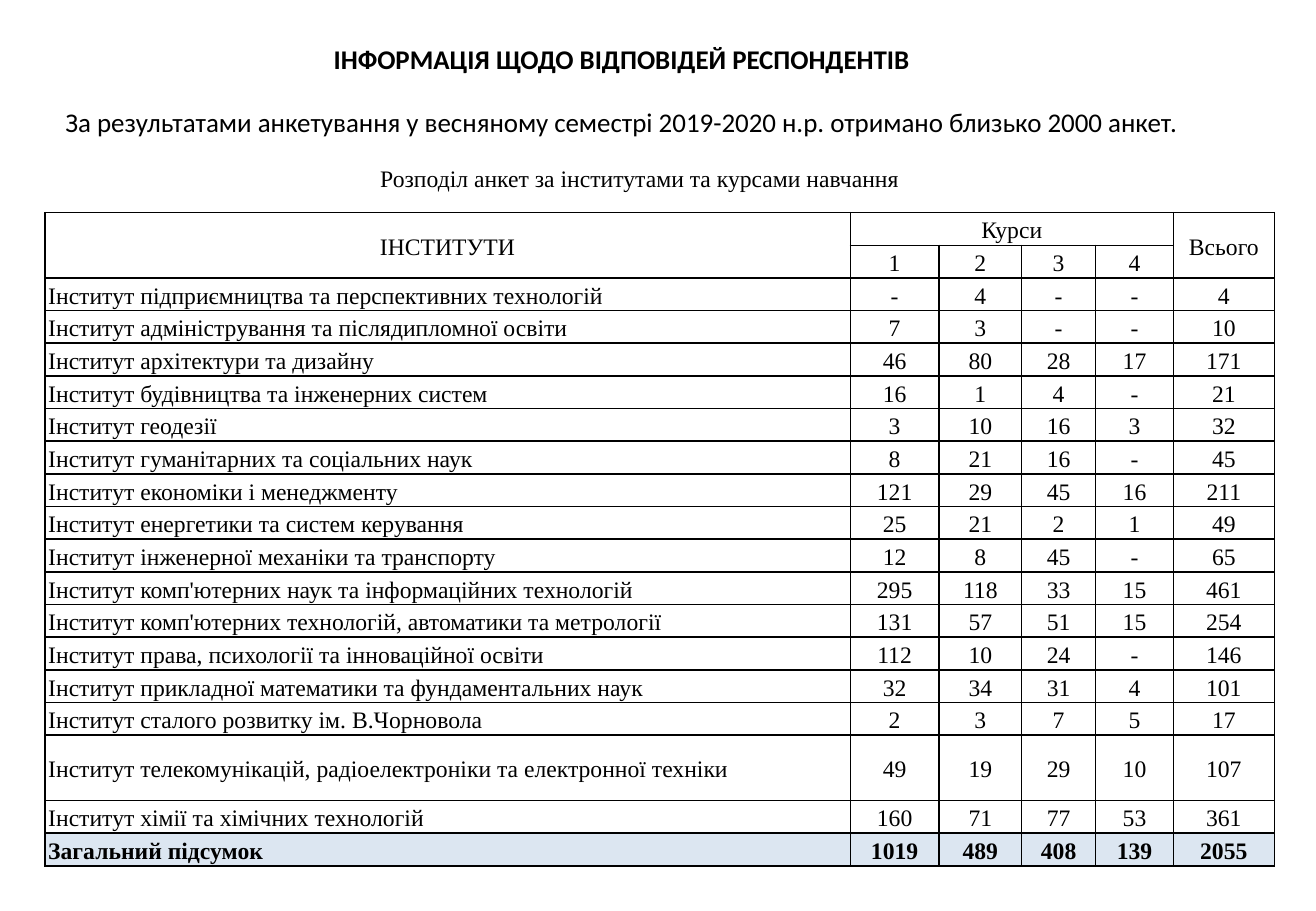
from lxml import etree
from pptx import Presentation
from pptx.dml.color import RGBColor
from pptx.enum.text import MSO_ANCHOR as ANCHOR, MSO_AUTO_SIZE as AUTO, PP_ALIGN as ALIGN
from pptx.oxml.ns import qn
from pptx.util import Pt

COLORS = {"text": "000000", "border": "000000", "total": "DCE6F1"}
SANS, SERIF = "Calibri", "Times New Roman"
COL_WIDTHS = [477.4, 52.6, 49, 43.9, 46.1, 59.8]
ROW_HEIGHT = 19.37
COURSES = [1, 2, 3, 4]
TALL_INSTITUTE = "Інститут телекомунікацій, радіоелектроніки та електронної техніки"
ANSWERS = [
    ("Інститут підприємництва та перспективних технологій", [0, 4, 0, 0]),
    ("Інститут адміністрування та післядипломної освіти", [7, 3, 0, 0]),
    ("Інститут архітектури та дизайну", [46, 80, 28, 17]),
    ("Інститут будівництва та інженерних систем", [16, 1, 4, 0]),
    ("Інститут геодезії", [3, 10, 16, 3]),
    ("Інститут гуманітарних та соціальних наук", [8, 21, 16, 0]),
    ("Інститут економіки і менеджменту", [121, 29, 45, 16]),
    ("Інститут енергетики та систем керування", [25, 21, 2, 1]),
    ("Інститут інженерної механіки та транспорту", [12, 8, 45, 0]),
    ("Інститут комп'ютерних наук та інформаційних технологій", [295, 118, 33, 15]),
    ("Інститут комп'ютерних технологій, автоматики та метрології", [131, 57, 51, 15]),
    ("Інститут права, психології та інноваційної освіти", [112, 10, 24, 0]),
    ("Інститут прикладної математики та фундаментальних наук", [32, 34, 31, 4]),
    ("Інститут сталого розвитку ім. В.Чорновола", [2, 3, 7, 5]),
    (TALL_INSTITUTE, [49, 19, 29, 10]),
    ("Інститут хімії та хімічних технологій", [160, 71, 77, 53]),
]


def write(tf, text, font=SERIF, size=14, bold=False, align=ALIGN.LEFT, spacing=None, indent=0):
    p = tf.paragraphs[0]
    p.alignment = align
    if spacing:
        p.line_spacing = spacing
    if indent:
        p._p.get_or_add_pPr().set("indent", str(Pt(indent)))
    r = p.add_run()
    r.text = text
    r.font.name = font
    r.font.size = Pt(size)
    r.font.bold = bold
    r.font.color.rgb = RGBColor.from_string(COLORS["text"])


def add_label(slide, box, text, wrap=True, anchor=ANCHOR.TOP, **fmt):
    sp = slide.shapes.add_textbox(*map(Pt, box))
    tf = sp.text_frame
    tf.word_wrap = wrap
    tf.auto_size = AUTO.SHAPE_TO_FIT_TEXT
    tf.vertical_anchor = anchor
    write(tf, text, **fmt)


def set_borders(cell):
    tc_pr = cell._tc.get_or_add_tcPr()
    for i, side in enumerate(("lnL", "lnR", "lnT", "lnB")):
        ln = etree.Element(qn(f"a:{side}"), w=str(Pt(1)))
        fill = etree.SubElement(ln, qn("a:solidFill"))
        etree.SubElement(fill, qn("a:srgbClr"), val=COLORS["border"])
        tc_pr.insert(i, ln)


def style_cell(cell, text, total, align):
    cell.margin_left = cell.margin_right = Pt(2)
    cell.margin_top = cell.margin_bottom = 0
    cell.vertical_anchor = ANCHOR.MIDDLE
    if total:
        cell.fill.solid()
        cell.fill.fore_color.rgb = RGBColor.from_string(COLORS["total"])
    else:
        cell.fill.background()
    set_borders(cell)
    write(cell.text_frame, text, bold=total, align=align, spacing=1.15)


def table_rows():
    totals = [sum(column) for column in zip(*(counts for _, counts in ANSWERS))]
    rows = [["ІНСТИТУТИ", "Курси", "", "", "", "Всього"], ["", *map(str, COURSES), ""]]
    for name, counts in [*ANSWERS, ("Загальний підсумок", totals)]:
        rows.append([name, *(str(n or "-") for n in counts), str(sum(counts))])
    return rows


def add_answers_table(slide, left, top):
    rows = table_rows()
    heights = [ROW_HEIGHT * (2 if row[0] == TALL_INSTITUTE else 1) for row in rows]
    box = (left, top, sum(COL_WIDTHS), sum(heights))
    table = slide.shapes.add_table(len(rows), len(COL_WIDTHS), *map(Pt, box)).table
    table.first_row = table.horz_banding = False
    for column, width in zip(table.columns, COL_WIDTHS):
        column.width = Pt(width)
    for i, row in enumerate(rows):
        table.rows[i].height = Pt(heights[i])
        for j, text in enumerate(row):
            align = ALIGN.LEFT if j == 0 and i > 1 else ALIGN.CENTER
            style_cell(table.cell(i, j), text, i == len(rows) - 1, align)
    for start, end in (((0, 0), (1, 0)), ((0, 1), (0, 4)), ((0, 5), (1, 5))):
        table.cell(*start).merge(table.cell(*end))


def add_heading(slide, left, top):
    add_label(slide, (left + 159, top, 361, 27), "ІНФОРМАЦІЯ ЩОДО ВІДПОВІДЕЙ РЕСПОНДЕНТІВ",
              wrap=False, font=SANS, size=16, bold=True)
    add_label(slide, (left, top + 37.4, 718, 46),
              "За результатами анкетування у весняному семестрі 2019-2020 н.р. "
              "отримано близько 2000 анкет.", font=SANS, size=16)
    add_label(slide, (left + 159, top + 72, 359, 24.5),
              "Розподіл анкет за інститутами та курсами навчання",
              anchor=ANCHOR.MIDDLE, align=ALIGN.CENTER, indent=18)


def main():
    prs = Presentation()
    prs.slide_width, prs.slide_height = Pt(780), Pt(540)
    slide = prs.slides.add_slide(prs.slide_layouts[6])
    add_heading(slide, 31.7, 21.6)
    add_answers_table(slide, 26.6, 126)
    prs.save("out.pptx")


if __name__ == "__main__":
    main()
